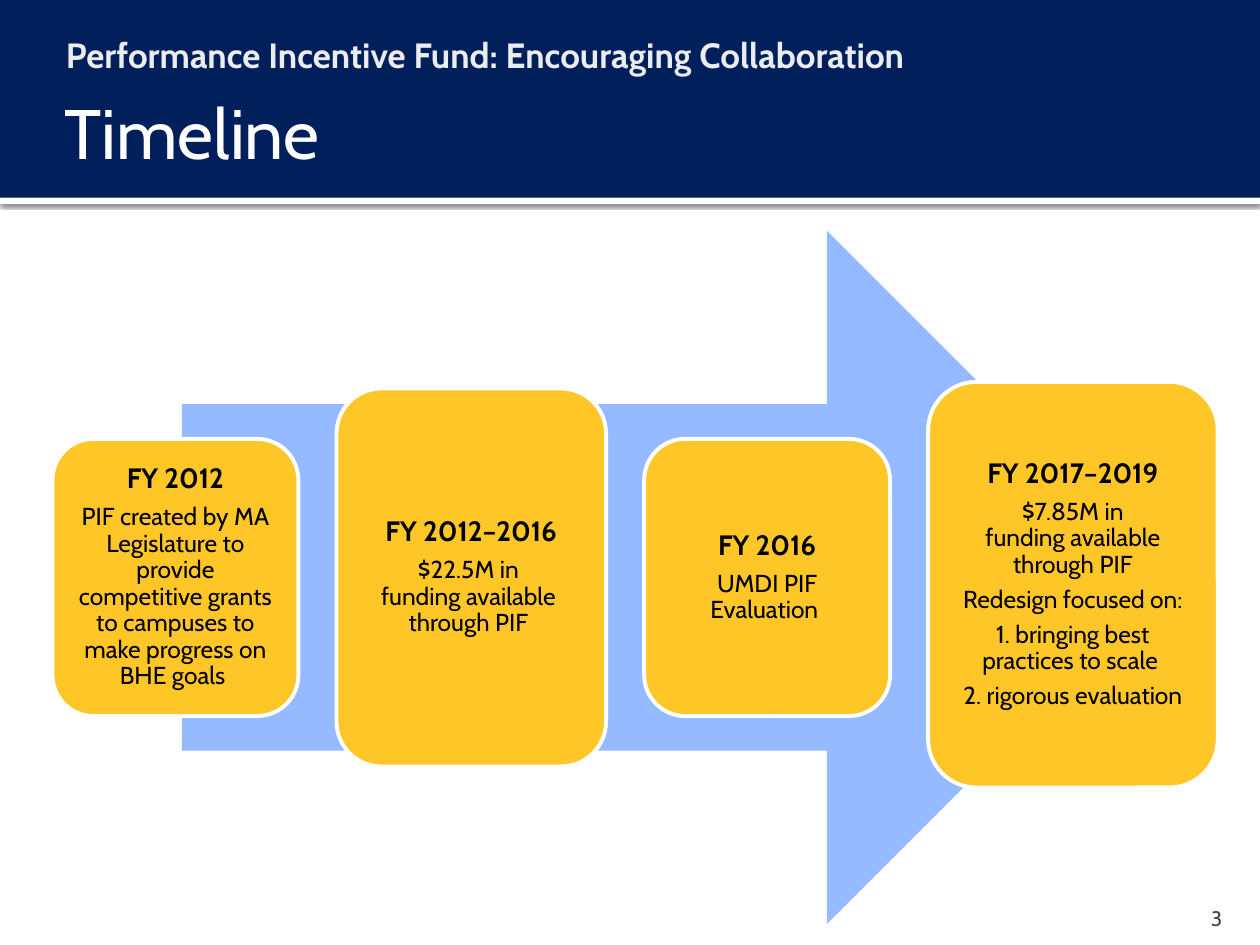
from dataclasses import dataclass
from typing import NamedTuple

from lxml.etree import SubElement
from pptx import Presentation
from pptx.dml.color import RGBColor
from pptx.enum.shapes import MSO_SHAPE
from pptx.enum.text import MSO_ANCHOR, PP_ALIGN
from pptx.oxml.ns import qn
from pptx.util import Pt


@dataclass(frozen=True)
class Theme:
    font: str = "Cabin"
    navy: str = "001F5B"
    white: str = "FFFFFF"
    pale: str = "EAECEE"
    grey: str = "454545"
    black: str = "000000"
    arrow: str = "96BAFF"
    gold: str = "FFC627"
    title: float = 40
    subtitle: float = 20
    heading: float = 16
    body: float = 14
    number: float = 12


class Box(NamedTuple):
    left: float
    top: float
    width: float
    height: float


class Style(NamedTuple):
    size: float
    color: str
    bold: bool = False


class Stage(NamedTuple):
    """One card on the timeline; a newline in a body text is a line break."""
    heading: str
    body: tuple[str, ...]
    width: float
    height: float
    middle: float = 330


T = Theme()
CARD_LEFT, CARD_GAP, CARD_INSET = 30, 21.8, 5
SPACE_AFTER = 0.35

STAGES = (
    Stage("FY 2012",
          ("PIF created by MA Legislature to provide competitive grants "
           "to campuses to make progress on BHE goals ",), 140.5, 158.4),
    Stage("FY 2012–2016",
          ("$22.5M in \nfunding available \nthrough PIF ",), 154, 216),
    Stage("FY 2016", ("UMDI PIF Evaluation ",), 140.5, 158.4),
    Stage("FY 2017–2019",
          (" $7.85M in \nfunding available through PIF",
           "Redesign focused on:",
           "1. bringing best practices to scale ",
           "2. rigorous evaluation"), 165.5, 231.8, 334.1),
)


def add_text(p, text: str, style: Style) -> None:
    for i, line in enumerate(text.split("\n")):
        if i:
            p.add_line_break()
        r = p.add_run()
        r.text = line
        r.font.name = T.font
        r.font.size = Pt(style.size)
        r.font.bold = style.bold
        r.font.color.rgb = RGBColor.from_string(style.color)


def set_frame(tf, anchor, left: float, top: float, right: float, bottom: float) -> None:
    tf.word_wrap = True
    tf.vertical_anchor = anchor
    tf.margin_left, tf.margin_top = Pt(left), Pt(top)
    tf.margin_right, tf.margin_bottom = Pt(right), Pt(bottom)


def add_block(s, kind, box: Box, fill: str):
    sp = s.shapes.add_shape(kind, *map(Pt, box))
    sp.shadow.inherit = False
    sp.fill.solid()
    sp.fill.fore_color.rgb = RGBColor.from_string(fill)
    sp.line.fill.background()
    return sp


def add_label(s, box: Box, text: str, style: Style, insets: tuple[float, ...],
              anchor=MSO_ANCHOR.TOP, align=PP_ALIGN.LEFT) -> None:
    tf = s.shapes.add_textbox(*map(Pt, box)).text_frame
    set_frame(tf, anchor, *insets)
    p = tf.paragraphs[0]
    p.alignment = align
    add_text(p, text, style)


def add_drop_shadow(sp) -> None:
    effects = sp._element.spPr.find(qn("a:effectLst"))
    shadow = SubElement(effects, qn("a:outerShdw"), blurRad=str(Pt(2.5)),
                        dist=str(Pt(0.8)), dir="5400000", rotWithShape="0")
    color = SubElement(shadow, qn("a:srgbClr"), val=T.black)
    SubElement(color, qn("a:alpha"), val="60000")


def add_card(s, stage: Stage, left: float) -> None:
    box = Box(left, stage.middle - stage.height / 2, stage.width, stage.height)
    sp = add_block(s, MSO_SHAPE.ROUNDED_RECTANGLE, box, T.gold)
    sp.line.color.rgb = RGBColor.from_string(T.white)
    sp.line.width = Pt(2.25)
    tf = sp.text_frame
    set_frame(tf, MSO_ANCHOR.MIDDLE, *[CARD_INSET] * 4)
    heading, body = Style(T.heading, T.black, True), Style(T.body, T.black)
    lines = [(stage.heading, heading), *((text, body) for text in stage.body)]
    for i, (text, style) in enumerate(lines):
        p = tf.add_paragraph() if i else tf.paragraphs[0]
        p.alignment = PP_ALIGN.CENTER
        p.line_spacing = 0.9
        p.space_after = Pt(SPACE_AFTER * style.size)
        add_text(p, text, style)


def add_header(s) -> None:
    rule = add_block(s, MSO_SHAPE.RECTANGLE, Box(0, 113, 720, 3.6), T.white)
    add_drop_shadow(rule)
    add_block(s, MSO_SHAPE.RECTANGLE, Box(0, 0, 720, 113), T.navy)
    add_label(s, Box(24, 12.2, 672, 36),
              "Performance Incentive Fund: Encouraging Collaboration",
              Style(T.subtitle, T.pale, True), (13.6, 7.2, 7.2, 3.6))
    add_label(s, Box(30, 42, 660, 66), "Timeline", Style(T.title, T.white),
              (7.2, 3.6, 3.6, 3.6), MSO_ANCHOR.MIDDLE)


def add_timeline(s) -> None:
    add_block(s, MSO_SHAPE.RIGHT_ARROW, Box(104, 132, 566.6, 396), T.arrow)
    left = CARD_LEFT
    for stage in STAGES:
        add_card(s, stage, left)
        left += stage.width + CARD_GAP


def main() -> None:
    prs = Presentation()
    prs.slide_width, prs.slide_height = Pt(720), Pt(540)
    s = prs.slides.add_slide(prs.slide_layouts[6])
    add_header(s)
    add_label(s, Box(648, 510, 57.6, 21.6), "3", Style(T.number, T.grey),
              (7.2, 3.6, 7.2, 0), MSO_ANCHOR.BOTTOM, PP_ALIGN.RIGHT)
    add_timeline(s)
    prs.save("out.pptx")


if __name__ == "__main__":
    main()
